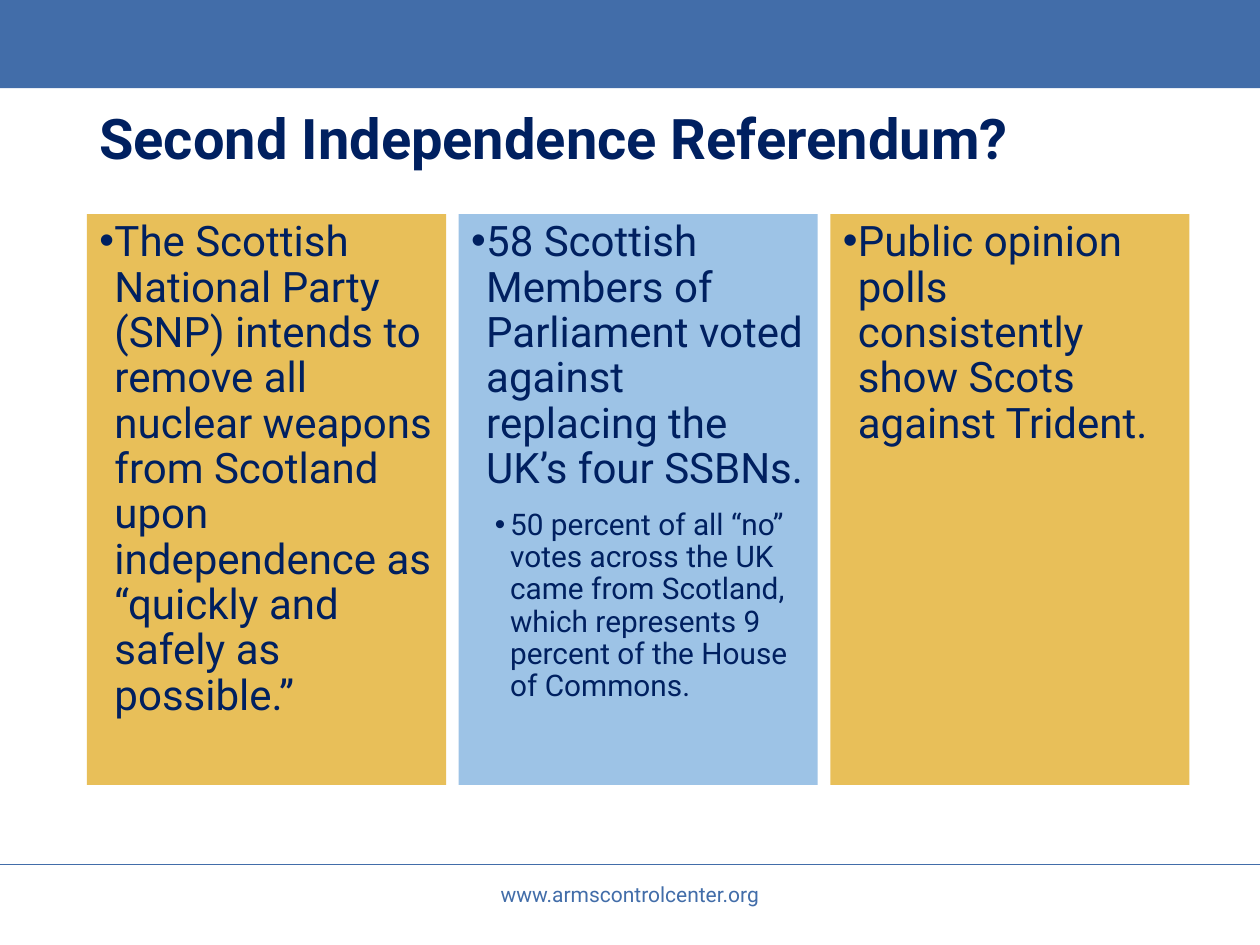
"""Build the slide on a second Scottish independence referendum."""
import dataclasses

import lxml.etree
import pptx
import pptx.dml.color
import pptx.enum.shapes
import pptx.enum.text
import pptx.oxml.ns
import pptx.util

Inches = pptx.util.Inches
Pt = pptx.util.Pt
RGBColor = pptx.dml.color.RGBColor
Align = pptx.enum.text.PP_ALIGN
Anchor = pptx.enum.text.MSO_ANCHOR
qn = pptx.oxml.ns.qn


@dataclasses.dataclass(frozen=True)
class Theme:
    font: str = "Roboto"
    navy: RGBColor = RGBColor(0x00, 0x20, 0x60)
    blue: RGBColor = RGBColor(0x42, 0x6D, 0xA9)
    gold: RGBColor = RGBColor(0xE8, 0xBF, 0x59)
    sky: RGBColor = RGBColor(0x9D, 0xC3, 0xE6)
    title_size: int = 32
    point_size: int = 24
    detail_size: int = 17
    footer_size: int = 12


theme = Theme()


def write_text(frame, text, *, size, color=theme.navy, bold=False, align=Align.LEFT,
               line_spacing=None, space_before=0, bullet_indent=None, level=0):
    first = not frame.paragraphs[0].runs
    paragraph = frame.paragraphs[0] if first else frame.add_paragraph()
    if bullet_indent is not None:
        properties = paragraph._p.get_or_add_pPr()
        properties.set("marL", str(Inches(bullet_indent)))
        properties.set("indent", str(Inches(-0.12)))
        lxml.etree.SubElement(properties, qn("a:buFont"), typeface="Arial")
        lxml.etree.SubElement(properties, qn("a:buChar"), char="•")
        if level:
            tabs = lxml.etree.SubElement(properties, qn("a:tabLst"))
            lxml.etree.SubElement(tabs, qn("a:tab"), pos=str(Inches(0.12)), algn="l")
    paragraph.level = level
    paragraph.alignment = align
    paragraph.line_spacing = line_spacing
    paragraph.space_before = Pt(space_before)
    run = paragraph.add_run()
    run.text = text
    run.font.name = theme.font
    run.font.size = Pt(size)
    run.font.bold = bold
    run.font.color.rgb = color


def add_rectangle(left, top, width, height, color):
    shape = slide.shapes.add_shape(
        pptx.enum.shapes.MSO_SHAPE.RECTANGLE,
        Inches(left), Inches(top), Inches(width), Inches(height))
    shape.shadow.inherit = False
    shape.fill.solid()
    shape.fill.fore_color.rgb = color
    shape.line.fill.background()
    return shape


presentation = pptx.Presentation()
presentation.slide_width = Inches(10)
presentation.slide_height = Inches(7.5)
slide = presentation.slides.add_slide(presentation.slide_layouts[6])

footer_rule = slide.shapes.add_connector(
    pptx.enum.shapes.MSO_CONNECTOR.STRAIGHT,
    Inches(-0.02), Inches(6.86), Inches(10), Inches(6.86))
footer_rule.line.color.rgb = theme.blue
footer_rule.line.width = Pt(0.5)
lxml.etree.SubElement(footer_rule._element.spPr, qn("a:effectLst"))

add_rectangle(0, 0, 10, 0.7, theme.blue)

title = slide.shapes.add_textbox(Inches(0.69), Inches(0.4), Inches(8.62), Inches(1.45))
title.text_frame.word_wrap = True
title.text_frame.vertical_anchor = Anchor.MIDDLE
write_text(title.text_frame, "Second Independence Referendum?",
           size=theme.title_size, bold=True, line_spacing=0.9)

footer = slide.shapes.add_textbox(Inches(3.31), Inches(6.95), Inches(3.38), Inches(0.4))
footer.text_frame.word_wrap = True
write_text(footer.text_frame, "www.armscontrolcenter.org",
           size=theme.footer_size, color=theme.blue, align=Align.CENTER)

columns = [
    (theme.gold, "The Scottish National Party (SNP) intends to remove all nuclear weapons "
     "from Scotland upon independence as “quickly and safely as possible.”", None),
    (theme.sky, "58 Scottish Members of Parliament voted against replacing the UK’s four SSBNs.",
     "50 percent of all “no” votes across the UK came from Scotland, "
     "which represents 9 percent of the House of Commons."),
    (theme.gold, "Public opinion polls consistently show Scots against Trident.", None),
]
column_width = 2.85
column_gap = 0.1
for index, (color, point, detail) in enumerate(columns):
    left = 0.69 + index * (column_width + column_gap)
    column = add_rectangle(left, 1.7, column_width, 4.53, color)
    frame = column.text_frame
    frame.word_wrap = True
    frame.vertical_anchor = Anchor.TOP
    write_text(frame, point, size=theme.point_size, line_spacing=0.9, bullet_indent=0.12)
    if detail:
        write_text(frame, detail, size=theme.detail_size, line_spacing=0.9,
                   space_before=10, bullet_indent=0.31, level=1)

presentation.save("out.pptx")
